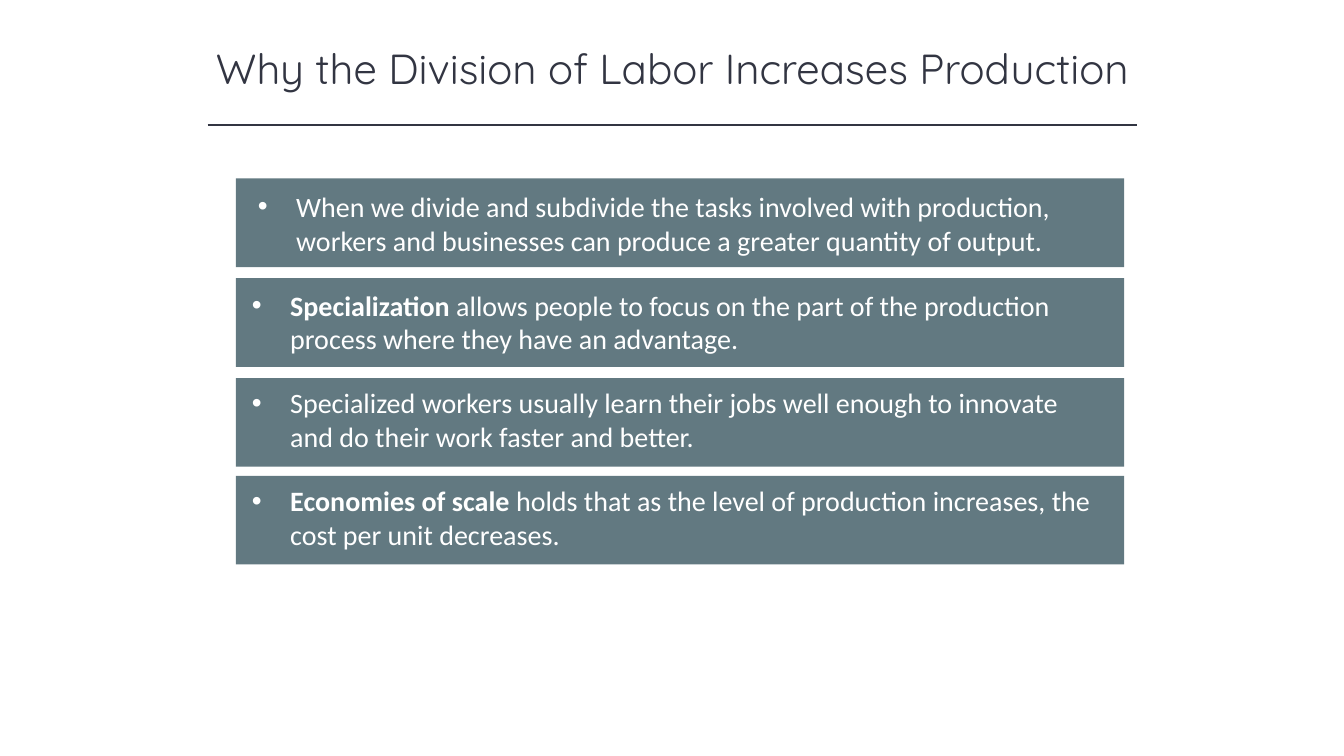
import pptx
import pptx.util
import pptx.dml.color
import pptx.enum.shapes
import pptx.enum.text
import pptx.oxml.ns
from lxml import etree

Inches = pptx.util.Inches
Pt = pptx.util.Pt
qn = pptx.oxml.ns.qn

COLORS = {"ink": "323542", "band": "627981", "text": "FFFFFF"}
TITLE = "Why the Division of Labor Increases Production"
BANDS = [
    {"top": 1.77, "text_at": (2.46, 1.83), "bold": "",
     "plain": "When we divide and subdivide the tasks involved with production, "
              "workers and businesses can produce a greater quantity of output."},
    {"top": 2.76, "text_at": (2.4, 2.81), "bold": "Specialization",
     "plain": " allows people to focus on the part of the production process "
              "where they have an advantage."},
    {"top": 3.75, "text_at": (2.4, 3.78), "bold": "",
     "plain": "Specialized workers usually learn their jobs well enough to innovate "
              "and do their work faster and better."},
    {"top": 4.72, "text_at": (2.4, 4.75), "bold": "Economies of scale ",
     "plain": "holds that as the level of production increases, the cost per unit decreases."},
]
BAND_LEFT, BAND_SIZE = 2.34, (8.81, 0.88)
TEXT_SIZE = (8.54, 0.77)
INDENT = Inches(0.38)


def rgb(name):
    return pptx.dml.color.RGBColor.from_string(COLORS[name])


def style(font, name, size, color, bold=False):
    font.name = name
    font.size = Pt(size)
    font.bold = bold
    font.color.rgb = rgb(color)


def add_rect(shapes, left, top, width, height):
    sp = shapes.add_shape(pptx.enum.shapes.MSO_SHAPE.RECTANGLE,
                          Inches(left), Inches(top), Inches(width), Inches(height))
    sp.shadow.inherit = False
    sp.fill.solid()
    sp.fill.fore_color.rgb = rgb("band")
    sp.line.fill.background()
    return sp


def add_bullet(p):
    pPr = p._p.get_or_add_pPr()
    pPr.set("marL", str(INDENT))
    pPr.set("indent", str(-INDENT))
    etree.SubElement(pPr, qn("a:buFont")).set("typeface", "Arial")
    etree.SubElement(pPr, qn("a:buChar")).set("char", "•")


def add_band(s, band):
    group = s.shapes.add_group_shape()
    add_rect(group.shapes, BAND_LEFT, band["top"], *BAND_SIZE)
    sp = add_rect(group.shapes, *band["text_at"], *TEXT_SIZE)
    tf = sp.text_frame
    tf.word_wrap = True
    tf.vertical_anchor = pptx.enum.text.MSO_ANCHOR.TOP
    p = tf.paragraphs[0]
    p.alignment = pptx.enum.text.PP_ALIGN.LEFT
    add_bullet(p)
    for key in ("bold", "plain"):
        if band[key]:
            r = p.add_run()
            r.text = band[key]
            style(r.font, "Calibri", 20, "text", key == "bold")


def main():
    prs = pptx.Presentation()
    prs.slide_width, prs.slide_height = Inches(13.33), Inches(7.5)
    s = prs.slides.add_slide(prs.slide_layouts[5])

    title = s.shapes.title
    title.left, title.top = Inches(1.67), Inches(0.37)
    title.width, title.height = Inches(10), Inches(0.61)
    tf = title.text_frame
    tf.text = TITLE
    tf.word_wrap = True
    tf.vertical_anchor = pptx.enum.text.MSO_ANCHOR.MIDDLE
    p = tf.paragraphs[0]
    p.alignment = pptx.enum.text.PP_ALIGN.CENTER
    style(p.runs[0].font, "Quicksand", 30, "ink")

    rule = s.shapes.add_connector(pptx.enum.shapes.MSO_CONNECTOR.STRAIGHT,
                                  Inches(2.06), Inches(1.24), Inches(11.28), Inches(1.24))
    rule.line.color.rgb = rgb("ink")
    rule.line.width = Pt(1)
    etree.SubElement(rule._element.spPr, qn("a:effectLst"))

    for band in BANDS:
        add_band(s, band)
    prs.save("out.pptx")


if __name__ == "__main__":
    main()
